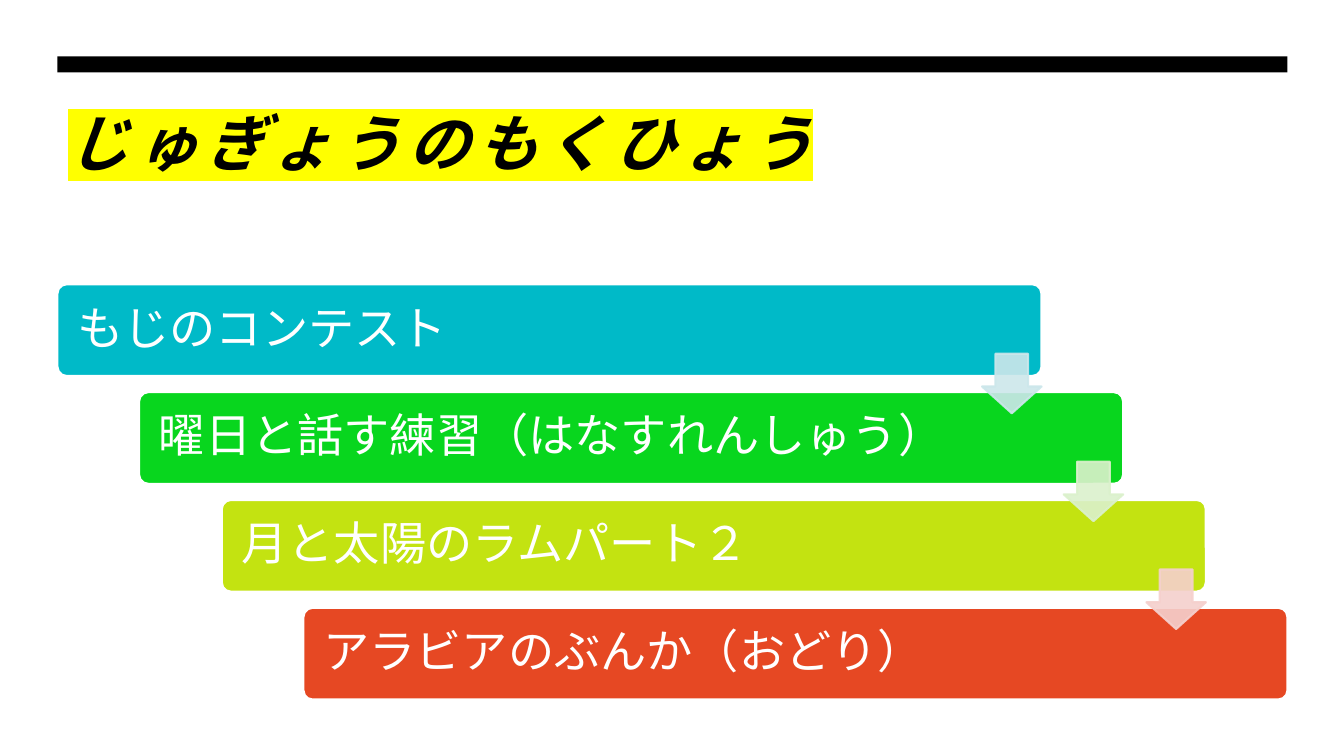
from lxml.etree import SubElement
from pptx import Presentation
from pptx.dml.color import RGBColor
from pptx.enum.shapes import MSO_SHAPE
from pptx.enum.text import MSO_ANCHOR, MSO_AUTO_SIZE, PP_ALIGN
from pptx.oxml import parse_xml
from pptx.oxml.ns import nsdecls, qn
from pptx.util import Pt

PX = 9144  # 100 px to the inch
FONT = "Roboto"
WHITE = RGBColor(0xFF, 0xFF, 0xFF)
BLACK = RGBColor(0x00, 0x00, 0x00)
YELLOW = RGBColor(0xFF, 0xFF, 0x00)

# Text, bar colour, colour of the arrow to the next bar
STEPS = [
    ("もじのコンテスト", RGBColor(0x00, 0xBA, 0xC8), RGBColor(0xCC, 0xE7, 0xEB)),
    ("曜日と話す練習（はなすれんしゅう）", RGBColor(0x08, 0xD6, 0x1E),
     RGBColor(0xDB, 0xF1, 0xCC)),
    ("月と太陽のラムパート２", RGBColor(0xC3, 0xE3, 0x11), RGBColor(0xF5, 0xD0, 0xCD)),
    ("アラビアのぶんか（おどり）", RGBColor(0xE6, 0x48, 0x23), None),
]


def box(*sides):
    return [side * PX for side in sides]


def write(shape, text, size, color, bold=False, italic=False, anchor=MSO_ANCHOR.MIDDLE,
          inset=(10, 5), space=None, mark=None):
    frame = shape.text_frame
    frame.word_wrap = True
    frame.auto_size = MSO_AUTO_SIZE.NONE
    frame.vertical_anchor = anchor
    frame.margin_left = frame.margin_right = inset[0] * PX
    frame.margin_top = frame.margin_bottom = inset[1] * PX
    para = frame.paragraphs[0]
    para.alignment = PP_ALIGN.LEFT
    para.line_spacing = 0.9
    run = para.add_run()
    run.text = text
    font = run.font
    font.name, font.size = FONT, Pt(size)
    font.bold, font.italic = bold, italic
    font.color.rgb = color
    props = run.font._element
    SubElement(props, qn("a:ea"), typeface=FONT)
    if space:
        props.set("spc", str(space * 100))
    if mark:
        props.find(qn("a:solidFill")).addnext(parse_xml(
            f'<a:highlight {nsdecls("a")}><a:srgbClr val="{mark}"/></a:highlight>'))


def block(slide, kind, place, fill, line=None, ratios=(), alpha=None):
    shape = slide.shapes.add_shape(kind, *box(*place))
    shape.shadow.inherit = False
    for i, ratio in enumerate(ratios):
        shape.adjustments[i] = ratio
    shape.fill.solid()
    shape.fill.fore_color.rgb = fill
    if line is None:
        shape.line.fill.background()
    else:
        shape.line.color.rgb = line
        shape.line.width = Pt(1.5)
    if alpha:
        for color in shape._element.spPr.iter(qn("a:srgbClr")):
            SubElement(color, qn("a:alpha"), val=str(alpha * 1000))
    return shape


def main():
    deck = Presentation()
    deck.slide_width, deck.slide_height = box(1333, 750)
    slide = deck.slides.add_slide(deck.slide_layouts[5])

    # Title under a black rule
    title = slide.shapes.title
    title.left, title.top, title.width, title.height = box(57, 107, 1220, 160)
    write(title, "じゅぎょうのもくひょう", 44, BLACK, bold=True, italic=True,
          anchor=MSO_ANCHOR.TOP, space=5, mark=YELLOW)
    block(slide, MSO_SHAPE.RECTANGLE, (57, 56, 1220, 16), BLACK)

    # Staircase of bars
    spots = [(57 + round(i * 244 / 3), 282 + i * 107) for i in range(len(STEPS))]
    for (left, top), (text, fill, _) in zip(spots, STEPS):
        bar = block(slide, MSO_SHAPE.ROUNDED_RECTANGLE, (left, top, 976, 91), fill,
                    line=WHITE, ratios=(0.1,))
        write(bar, text, 33, WHITE, inset=(17, 14))

    # Arrows from each bar to the next
    for (left, top), (_, _, tint) in zip(spots[:-1], STEPS):
        block(slide, MSO_SHAPE.DOWN_ARROW, (left + 917, top + 69, 59, 59), tint,
              line=tint, ratios=(0.55, 0.45), alpha=90)

    deck.save("out.pptx")


if __name__ == "__main__":
    main()
